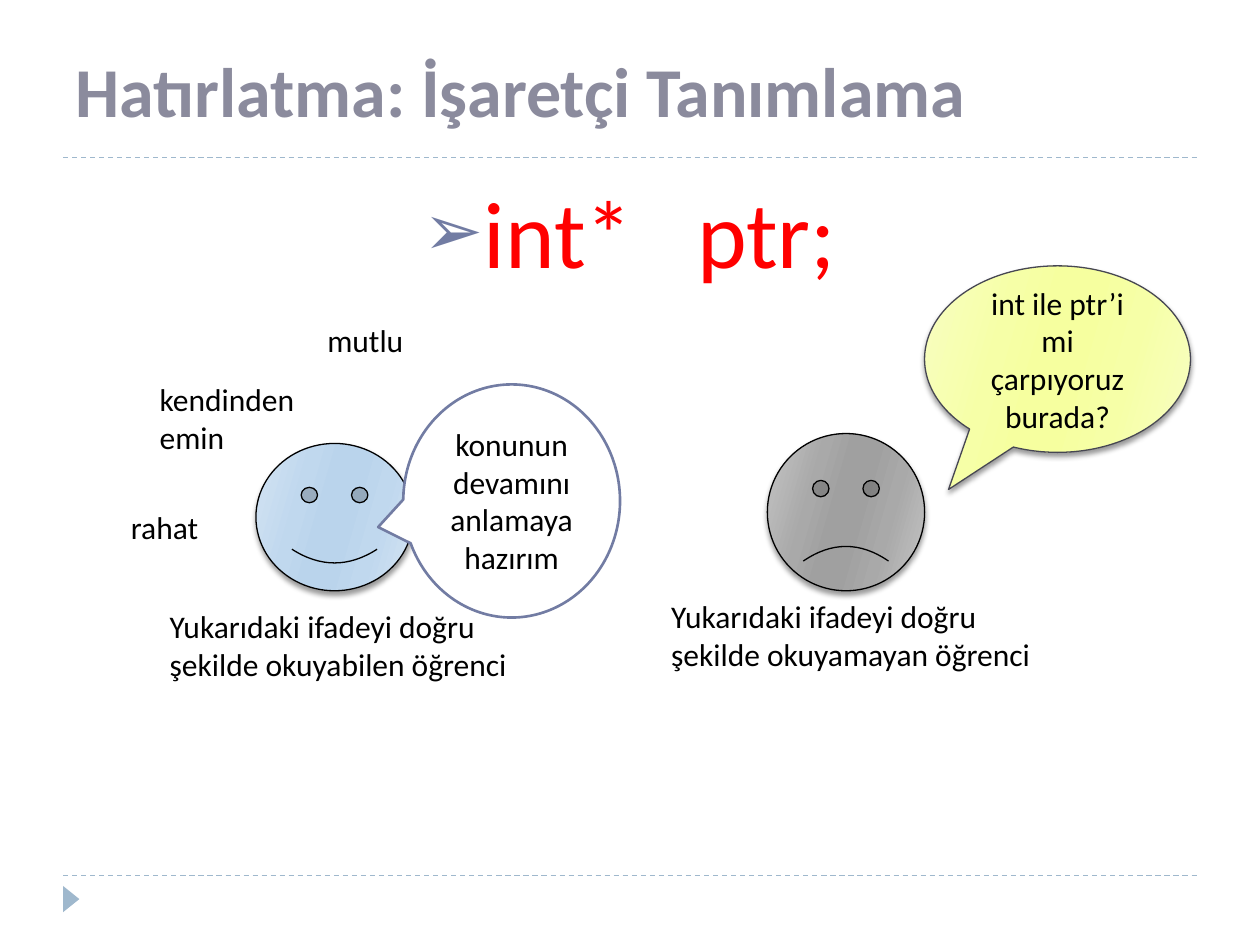
import pptx
import pptx.util
import pptx.dml.color
import pptx.enum.dml
import pptx.enum.shapes
import pptx.enum.text
import pptx.oxml
import pptx.oxml.ns

Cm = pptx.util.Cm
Pt = pptx.util.Pt
RGB = pptx.dml.color.RGBColor
Kind = pptx.enum.shapes.MSO_SHAPE
Align = pptx.enum.text.PP_ALIGN
Anchor = pptx.enum.text.MSO_ANCHOR

BLACK = RGB(0, 0, 0)
WHITE = RGB(0xFF, 0xFF, 0xFF)
RED = RGB(0xFF, 0, 0)
GREY = RGB(0x8B, 0x8B, 0x9D)
PALE = RGB(0x9F, 0xB8, 0xCD)
SLATE = RGB(0x72, 0x7C, 0xA3)
DARK = RGB(0x46, 0x46, 0x53)
BLUES = RGB(0xD3, 0xE3, 0xF2), RGB(0xC0, 0xD8, 0xEE), RGB(0xBA, 0xD4, 0xEC)
GREYS = RGB(0xC5, 0xC5, 0xC5), RGB(0xA9, 0xA9, 0xA9), RGB(0xA0, 0xA0, 0xA0)
LIMES = RGB(0xF8, 0xFE, 0xC2), RGB(0xF6, 0xFF, 0xA7), RGB(0xF6, 0xFF, 0x9F)
STOPS = 0, 30, 45, 55, 73, 100


def node(tag, **attrs):
    item = pptx.oxml.parse_xml(f"<a:{tag} {pptx.oxml.ns.nsdecls('a')}/>")
    for name, value in attrs.items():
        item.set(name, str(value))
    return item


def tint(color, **attrs):
    item = node("srgbClr", val=color)
    for name, value in attrs.items():
        item.append(node(name, val=value))
    return item


class Deck:
    font = "Calibri"
    size = 18

    def __init__(self):
        self.file = pptx.Presentation()
        self.file.slide_width = Cm(25.4)
        self.file.slide_height = Cm(19.05)
        self.slide = self.file.slides.add_slide(self.file.slide_layouts[1])
        self.shapes = self.slide.shapes

    def fill_text(self, frame, text, size=size, color=BLACK, bold=False, align=Align.LEFT):
        frame.text = text
        frame.word_wrap = True
        for para in frame.paragraphs:
            para.alignment = align
            for run in para.runs:
                run.font.name = self.font
                run.font.size = Pt(size)
                run.font.bold = bold
                run.font.color.rgb = color

    def place(self, shape, box):
        shape.left, shape.top, shape.width, shape.height = map(Cm, box)

    def title(self, text, box):
        shape = self.shapes.title
        self.place(shape, box)
        self.fill_text(shape.text_frame, text, 40, GREY, True)
        shape.text_frame.vertical_anchor = Anchor.MIDDLE

    def body(self, text, box):
        shape = self.slide.placeholders[1]
        self.place(shape, box)
        frame = shape.text_frame
        self.fill_text(frame, text, 54, RED, align=Align.CENTER)
        frame.auto_size = pptx.enum.text.MSO_AUTO_SIZE.NONE
        for para in frame.paragraphs:
            para.space_before = Pt(6)
            props = para._p.get_or_add_pPr()
            props.set("marL", str(Cm(0.95)))
            props.set("indent", str(Cm(-0.95)))
            color = node("buClr")
            color.append(tint(SLATE))
            props.append(color)
            props.append(node("buSzPct", val=76000))
            props.append(node("buFont", typeface=self.font))
            props.append(node("buChar", char="➢"))

    def label(self, text, box):
        shape = self.shapes.add_textbox(*map(Cm, box))
        self.fill_text(shape.text_frame, text)

    def rule(self, top):
        line = self.shapes.add_connector(
            pptx.enum.shapes.MSO_CONNECTOR.STRAIGHT, Cm(1.27), Cm(top), Cm(24.13), Cm(top))
        line.line.color.rgb = PALE
        line.line.width = Pt(0.75)
        line.line.dash_style = pptx.enum.dml.MSO_LINE.DASH
        line.element.spPr.append(node("effectLst"))

    def shape(self, kind, box, fill, line=None, width=0.75, adjust=()):
        shape = self.shapes.add_shape(kind, *map(Cm, box))
        for index, value in enumerate(adjust):
            shape.adjustments[index] = value
        if line is None:
            shape.line.fill.background()
        else:
            shape.line.color.rgb = line
            shape.line.width = Pt(width)
        shape.shadow.inherit = False
        if isinstance(fill, tuple) and len(fill) == 3 and isinstance(fill[0], RGB):
            self.shade(shape, fill)
            self.drop(shape)
        else:
            shape.fill.solid()
            shape.fill.fore_color.rgb = fill
        return shape

    def shade(self, shape, colors):
        shape.fill.gradient()
        grad = shape.element.spPr.find(pptx.oxml.ns.qn("a:gradFill"))
        grad.clear()
        stops = node("gsLst")
        for pos, color in zip(STOPS, colors + colors[::-1]):
            stop = node("gs", pos=pos * 1000)
            stop.append(tint(color))
            stops.append(stop)
        grad.append(stops)
        grad.append(node("lin", ang=16 * 60000, scaled=0))

    def drop(self, shape):
        shadow = node("outerShdw", blurRad=Pt(3), dist=Pt(2), dir=90 * 60000, rotWithShape=0)
        shadow.append(tint(BLACK, alpha=40000))
        shape.element.spPr.find(pptx.oxml.ns.qn("a:effectLst")).append(shadow)

    def face(self, box, fill, smile):
        self.shape(Kind.SMILEY_FACE, box, fill, BLACK, adjust=[smile])

    def bubble(self, text, box, fill, line, width, tip, anchor):
        shape = self.shape(Kind.OVAL_CALLOUT, box, fill, line, width, tip)
        self.fill_text(shape.text_frame, text, align=Align.CENTER)
        shape.text_frame.vertical_anchor = anchor


def main():
    deck = Deck()
    for top in (17.65, 3.18):
        deck.rule(top)
    mark = deck.shape(Kind.ISOSCELES_TRIANGLE, (1.17, 17.96, 0.53, 0.33), PALE)
    mark.rotation = 90
    deck.title("Hatırlatma: İşaretçi Tanımlama", (1.27, 0.43, 22.86, 2.75))
    deck.body("int*   ptr;", (1.27, 3.38, 22.86, 13.72))
    deck.face((5.16, 8.94, 3.17, 2.97), BLUES, 0.047)
    deck.face((15.47, 8.74, 3.17, 3.17), GREYS, -0.047)
    for text, box in (
        ("Yukarıdaki ifadeyi doğru şekilde okuyabilen öğrenci", (3.17, 12.12, 8.13, 1.8)),
        ("Yukarıdaki ifadeyi doğru şekilde okuyamayan öğrenci", (13.28, 11.91, 8.13, 1.8)),
        ("rahat", (2.39, 10.11, 2.18, 1.02)),
        ("mutlu", (6.35, 6.35, 2.18, 1.02)),
        ("kendinden emin", (2.97, 7.54, 4.17, 1.8)),
    ):
        deck.label(text, box)
    deck.bubble("konunun\ndevamını anlamaya hazırım", (8.13, 7.75, 4.37, 4.7),
                WHITE, SLATE, 1.5, (-0.616, 0.112), Anchor.TOP)
    deck.bubble("int ile ptr’i mi çarpıyoruz burada?", (18.64, 5.36, 5.36, 3.76),
                LIMES, DARK, 0.75, (-0.41, 0.699), Anchor.MIDDLE)
    deck.file.save("out.pptx")


if __name__ == "__main__":
    main()
